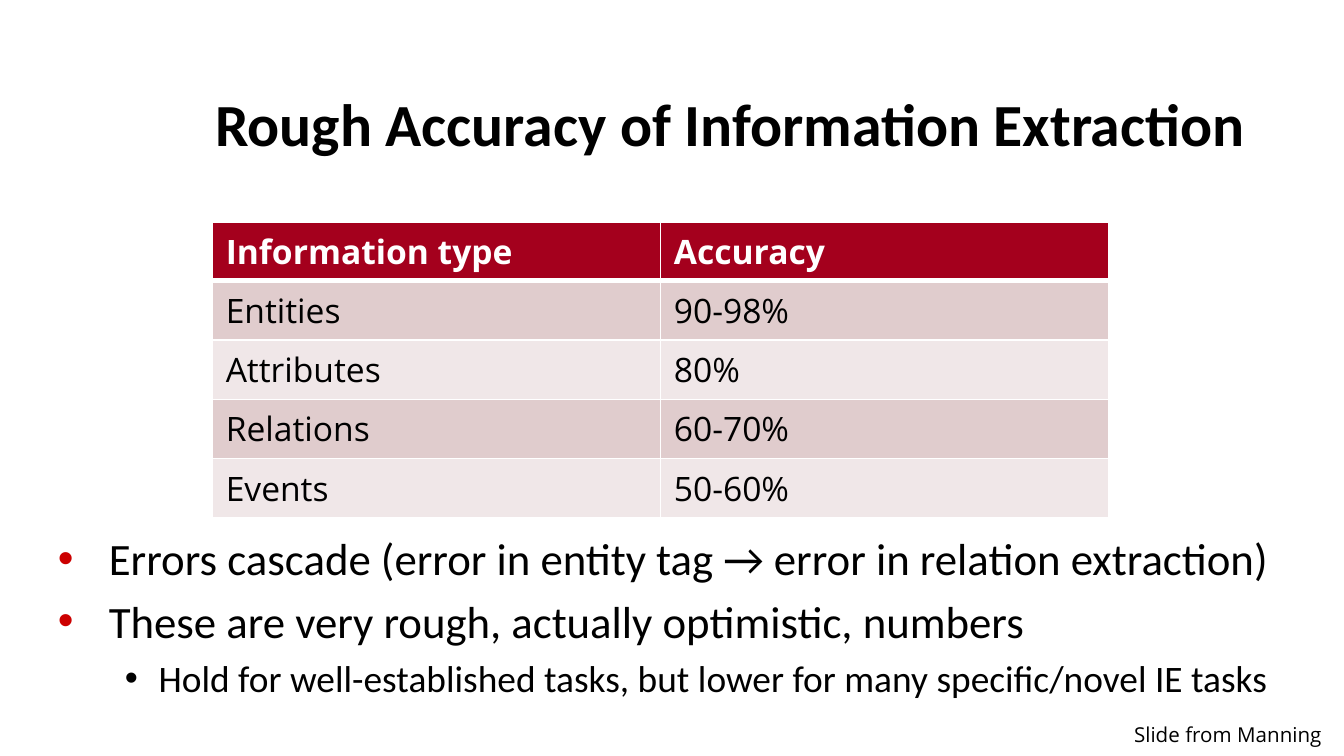
from lxml.etree import SubElement
from pptx import Presentation
from pptx.dml.color import RGBColor
from pptx.enum.text import MSO_ANCHOR, MSO_AUTO_SIZE, PP_ALIGN
from pptx.oxml import parse_xml
from pptx.oxml.ns import nsdecls, qn
from pptx.util import Inches, Pt

BLACK, WHITE = "000000", "FFFFFF"
HEADER_RED, BULLET_RED = "A4001D", "CC0000"
BANDS = ("E0CCCD", "F0E7E8")

ACCURACY = [
    ("Information type", "Accuracy"),
    ("Entities", "90-98%"),
    ("Attributes", "80%"),
    ("Relations", "60-70%"),
    ("Events", "50-60%"),
]
# text, level, size, bullet colour, left indent, hanging indent
REMARKS = [
    ("Errors cascade (error in entity tag → error in relation extraction)",
     0, 24, BULLET_RED, 0.38, 0.38),
    ("These are very rough, actually optimistic, numbers",
     0, 24, BULLET_RED, 0.38, 0.38),
    ("Hold for well-established tasks, but lower for many specific/novel IE tasks",
     1, 20, BLACK, 0.75, 0.25),
]


def rgb(color):
    return RGBColor.from_string(color)


def set_font(paragraph, name, size, color=BLACK, bold=False):
    font = paragraph.font
    font.name, font.size, font.bold = name, Pt(size), bold
    font.color.rgb = rgb(color)


def place(shape, left, top, width, height):
    shape.left, shape.top = Inches(left), Inches(top)
    shape.width, shape.height = Inches(width), Inches(height)


def set_bullet(paragraph, color, left, hanging):
    props = paragraph._p.get_or_add_pPr()
    props.set("marL", str(Inches(left)))
    props.set("indent", str(-Inches(hanging)))
    bullet_color = SubElement(props, qn("a:buClr"))
    SubElement(bullet_color, qn("a:srgbClr"), val=color)
    SubElement(props, qn("a:buFont"), typeface="Arial")
    SubElement(props, qn("a:buChar"), char="•")


def set_borders(cell, **widths):
    """Draw white borders; they must precede the fill in the cell properties."""
    props = cell._tc.get_or_add_tcPr()
    for position, side in enumerate("LRTB"):
        width = Pt(widths.get(side, 1))
        props.insert(position, parse_xml(
            f'<a:ln{side} {nsdecls("a")} w="{width}"><a:solidFill>'
            f'<a:srgbClr val="{WHITE}"/></a:solidFill></a:ln{side}>'))


def fill_title(title, text):
    place(title, 1.5, 0.42, 8.17, 0.81)
    frame = title.text_frame
    frame.text = text
    frame.auto_size = MSO_AUTO_SIZE.NONE
    frame.vertical_anchor = MSO_ANCHOR.BOTTOM
    heading = frame.paragraphs[0]
    heading.alignment = PP_ALIGN.LEFT
    set_font(heading, "Calibri", 32, bold=True)


def fill_remarks(body):
    place(body, 0.33, 3.9, 9.33, 1.06)
    frame = body.text_frame
    frame.text = "\n".join(remark[0] for remark in REMARKS)
    frame.auto_size = MSO_AUTO_SIZE.NONE
    for paragraph, remark in zip(frame.paragraphs, REMARKS):
        _, level, size, color, left, hanging = remark
        paragraph.level = level
        set_bullet(paragraph, color, left, hanging)
        set_font(paragraph, "Calibri", size)


def add_accuracy_table(slide):
    table = slide.shapes.add_table(
        len(ACCURACY), 2, Inches(1.58), Inches(1.65), Inches(6.67), Inches(2.03)).table
    for row, entries in enumerate(ACCURACY):
        header = row == 0
        for column, entry in enumerate(entries):
            cell = table.cell(row, column)
            cell.text = entry
            set_font(cell.text_frame.paragraphs[0], "Open Sans", 18,
                     WHITE if header else BLACK, header)
            cell.fill.solid()
            cell.fill.fore_color.rgb = rgb(HEADER_RED if header else BANDS[(row - 1) % 2])
            # A thicker rule parts the header from the entries
            set_borders(cell, B=3 if header else 1, T=3 if row == 1 else 1)


def add_credit(slide, text):
    credit = slide.shapes.add_textbox(Inches(8.34), Inches(5.32), Inches(1.66), Inches(0.29))
    frame = credit.text_frame
    frame.text = text
    frame.word_wrap = False
    frame.auto_size = MSO_AUTO_SIZE.SHAPE_TO_FIT_TEXT
    set_font(frame.paragraphs[0], "Open Sans", 11)


def main():
    deck = Presentation()
    # Widescreen, 16:9
    deck.slide_width = Inches(10)
    deck.slide_height = Inches(10 * 9 / 16)
    slide = deck.slides.add_slide(deck.slide_layouts[1])

    # Title and remarks use the template's placeholders
    fill_title(slide.shapes.title, "Rough Accuracy of Information Extraction")
    fill_remarks(slide.placeholders[1])

    # Accuracy by information type
    add_accuracy_table(slide)

    # Credit in the corner
    add_credit(slide, "Slide from Manning")
    deck.save("out.pptx")


if __name__ == "__main__":
    main()
